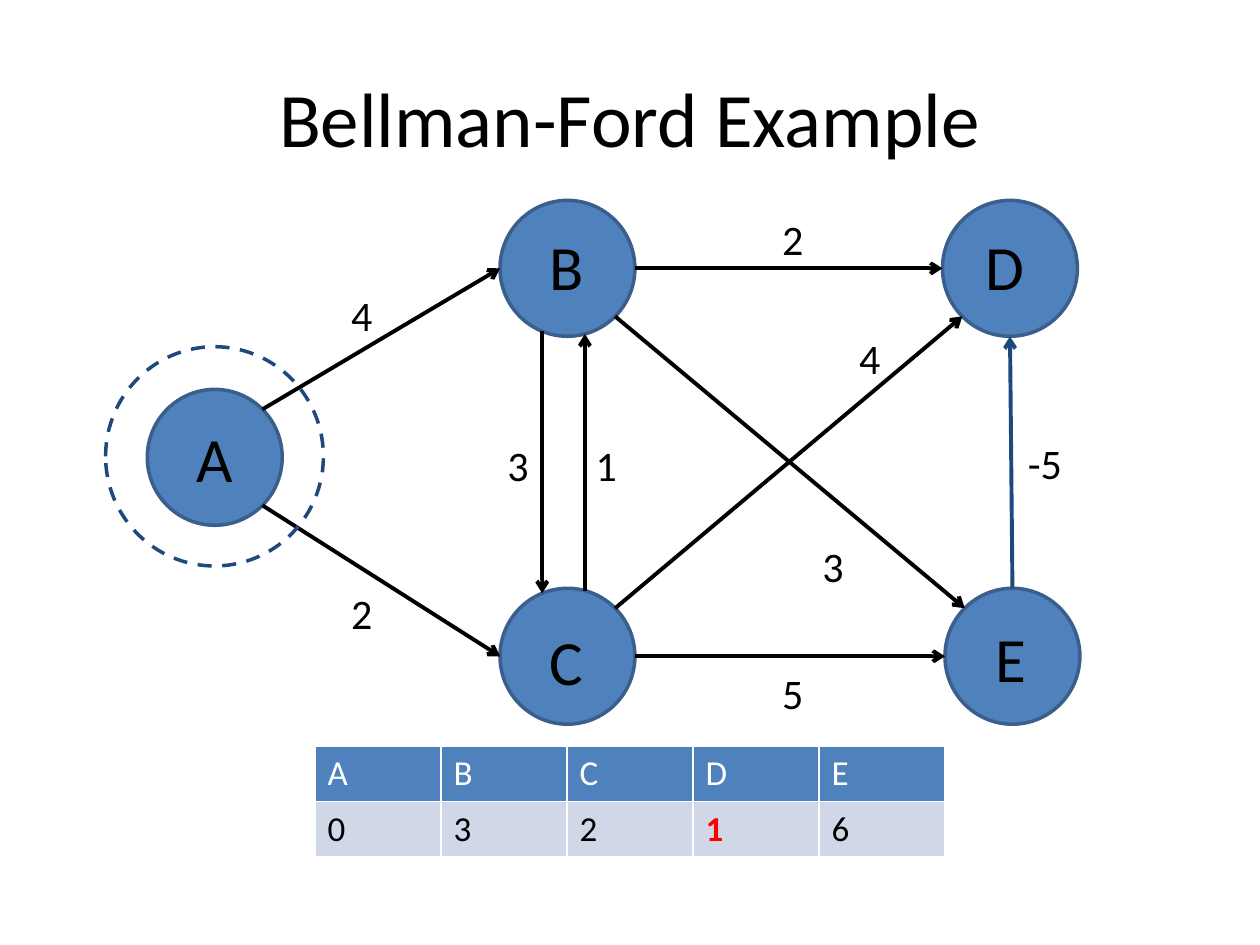
import math

from lxml import etree
from pptx import Presentation, util as u
from pptx.dml.color import RGBColor
from pptx.enum import dml, shapes, text
from pptx.oxml.ns import qn

COLORS = {"node": "4F81BD", "rim": "3A5F8C", "accent": "1F497D", "band": "D0D8E8",
          "ink": "000000", "paper": "FFFFFF", "changed": "FF0000"}
FONT = "Calibri"
NODE_W, NODE_H = 2.72, 2.74

# name: (left, top), letter offset inside the circle
NODES = {
    "A": ((2.97, 7.85), (0.48, 0.48)),
    "B": ((10.08, 4.04), (0.46, 0.43)),
    "C": ((10.08, 11.86), (0.46, 0.56)),
    "D": ((19, 4.04), (0.38, 0.43)),
    "E": ((19.05, 11.86), (0.46, 0.51)),
}

EDGES = [
    ("A", -45, "B", 180, "4", (6.83, 5.72), "ink"),
    ("A", 45, "C", 180, "2", (6.83, 11.71), "ink"),
    ("B", 112, "C", -112, "3", (9.98, 8.74), "ink"),
    ("C", -75, "B", 75, "1", (11.76, 8.74), "ink"),
    ("B", 0, "D", 180, "2", (15.52, 4.17), "ink"),
    ("B", 45, "E", -135, "3", (16.33, 10.77), "ink"),
    ("E", -90, "D", 90, "-5", (20.47, 8.69), "accent"),
    ("C", 0, "E", 180, "5", (15.52, 13.34), "ink"),
    ("C", -45, "D", 135, "4", (17.07, 6.58), "ink"),
]
DISTANCES = {"A": "0", "B": "3", "C": "2", "D": "1", "E": "6"}


def rgb(name):
    return RGBColor.from_string(COLORS[name])


def write(frame, words, size=24, color="ink", bold=False, align=text.PP_ALIGN.LEFT):
    paragraph = frame.paragraphs[0]
    paragraph.alignment = align
    run = paragraph.add_run()
    run.text = words
    run.font.name, run.font.size, run.font.bold = FONT, u.Pt(size), bold
    run.font.color.rgb = rgb(color)


def rim_point(name, degrees):
    (left, top), _ = NODES[name]
    angle = math.radians(degrees)
    return (left + NODE_W / 2 * (1 + math.cos(angle)),
            top + NODE_H / 2 * (1 + math.sin(angle)))


class GraphSlide:
    """Draws a weighted graph and its distance table on one slide."""

    def __init__(self, deck):
        self.slide = deck.slides.add_slide(deck.slide_layouts[5])
        self.shapes = self.slide.shapes

    def title(self, words):
        title = self.shapes.title
        title.left, title.top = u.Cm(1.27), u.Cm(0.76)
        title.width, title.height = u.Cm(22.86), u.Cm(3.18)
        title.text_frame.vertical_anchor = text.MSO_ANCHOR.MIDDLE
        write(title.text_frame, words, size=44, align=text.PP_ALIGN.CENTER)

    def label(self, words, left, top, width, height, **style):
        box = self.shapes.add_textbox(*map(u.Cm, (left, top, width, height)))
        box.text_frame.word_wrap = True
        write(box.text_frame, words, **style)

    def circle(self, left, top, width, height, line, fill=None):
        circle = self.shapes.add_shape(shapes.MSO_SHAPE.OVAL,
                                       *map(u.Cm, (left, top, width, height)))
        circle.shadow.inherit = False
        circle.line.color.rgb, circle.line.width = rgb(line), u.Pt(2)
        if fill:
            circle.fill.solid()
            circle.fill.fore_color.rgb = rgb(fill)
        else:
            circle.fill.background()
        return circle

    def node(self, name):
        (left, top), (dx, dy) = NODES[name]
        self.circle(left, top, NODE_W, NODE_H, "rim", "node")
        self.label(name, left + dx, top + dy, 1.75, 1.8, size=36,
                   align=text.PP_ALIGN.CENTER)

    def halo(self, left, top, width, height):
        ring = self.circle(left, top, width, height, "accent")
        ring.line.dash_style = dml.MSO_LINE.DASH

    def edge(self, source, leave, target, arrive, weight, spot, color):
        ends = rim_point(source, leave) + rim_point(target, arrive)
        arrow = self.shapes.add_connector(shapes.MSO_CONNECTOR.STRAIGHT, *map(u.Cm, ends))
        arrow.line.color.rgb, arrow.line.width = rgb(color), u.Pt(2.25)
        etree.SubElement(arrow.line._get_or_add_ln(), qn("a:tailEnd"), type="arrow")
        etree.SubElement(arrow._element.spPr, qn("a:effectLst"))
        self.label(weight, *spot, 0.84 if len(weight) == 1 else 1.75, 1.27)

    def table(self, distances, changed):
        grid = self.shapes.add_table(2, len(distances), u.Cm(6.35), u.Cm(15.04),
                                     u.Cm(12.7), u.Cm(2.22)).table
        for column, (name, distance) in enumerate(distances.items()):
            is_new = name == changed
            self.cell(grid.cell(0, column), name, "node", color="paper")
            self.cell(grid.cell(1, column), distance, "band", bold=is_new,
                      color="changed" if is_new else "ink")

    def cell(self, cell, words, fill, **style):
        cell.fill.solid()
        cell.fill.fore_color.rgb = rgb(fill)
        write(cell.text_frame, words, size=20, **style)


def main():
    deck = Presentation()
    deck.slide_width, deck.slide_height = u.Cm(25.4), u.Cm(19.05)
    graph = GraphSlide(deck)
    graph.title("Bellman-Ford Example")
    graph.table(DISTANCES, changed="D")
    for name in NODES:
        graph.node(name)
    for edge in EDGES:
        graph.edge(*edge)
    graph.halo(2.13, 6.99, 4.39, 4.42)
    deck.save("out.pptx")


if __name__ == "__main__":
    main()
